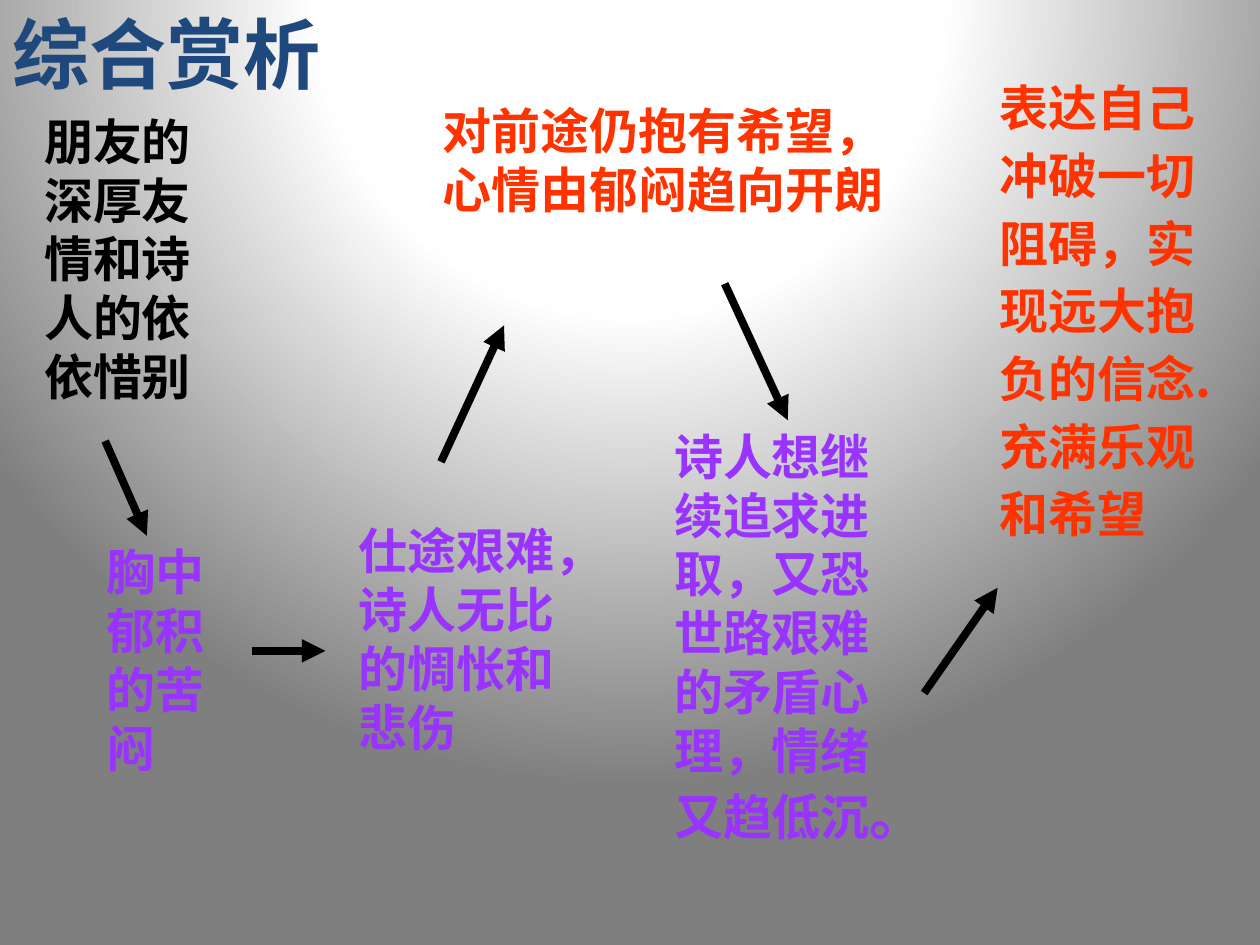
from lxml import etree
from pptx import Presentation
from pptx.dml.color import RGBColor
from pptx.enum.shapes import MSO_CONNECTOR
from pptx.enum.text import MSO_ANCHOR, MSO_AUTO_SIZE, PP_ALIGN
from pptx.oxml import parse_xml
from pptx.oxml.ns import qn
from pptx.util import Cm, Pt

STRAIGHT = MSO_CONNECTOR.STRAIGHT
TOP = MSO_ANCHOR.TOP
NO_FIT = MSO_AUTO_SIZE.NONE
LEFT = PP_ALIGN.LEFT
TITLE_ONLY = 5

CJK = "Noto Sans CJK SC"
PURPLE, ORANGE, BLACK, NAVY = "9933FF", "FF3300", "000000", "1F497D"
GRADIENT_STOPS = [(0, "FFFFFF"), (40, "FEFEFE"), (100, "7F7F7F")]

STAGES = [
    ((0.64, 2.12, 3.81, 6.2), "Arial", BLACK, 1,
     [("朋友的深厚友情和诗人的依依惜别", 28)]),
    ((1.9, 10.8, 3.18, 5), CJK, PURPLE, 1, [("胸中郁积的苦闷", 28)]),
    ((6.98, 10.37, 4.45, 6.2), "Arial", PURPLE, 1,
     [("仕途艰难，诗人无比的惆怅和悲伤", 28)]),
    ((8.68, 1.9, 9.53, 2.62), CJK, ORANGE, 1,
     [("对前途仍抱有希望，心情由郁闷趋向开朗", 28)]),
    ((13.34, 8.47, 5.29, 8.74), CJK, PURPLE, 1,
     [("诗人想继续追求进取，又恐世路艰难的矛盾心理，情绪又趋低沉", 28), ("。", 32)]),
    ((19.9, 1.27, 4.6, 9.8), CJK, ORANGE, 1.15,
     [("表达自己冲破一切阻碍，实现远大抱负的信念.充满乐观和希望", 28)]),
]
ARROWS = [
    (2.12, 8.89, 2.96, 10.8),
    (5.08, 13.12, 6.56, 13.12),
    (8.89, 9.31, 10.16, 6.56),
    (14.61, 5.72, 15.88, 8.47),
    (18.63, 13.97, 20.11, 11.85),
]


def color(hex_value):
    """Return the colour for a hex string."""
    return RGBColor.from_string(hex_value)


def format_run(run, face, size, hex_value):
    """Give a run its bold face, size and colour."""
    for name, value in {"name": face, "size": Pt(size), "bold": True}.items():
        setattr(run.font, name, value)
    run.font.color.rgb = color(hex_value)
    east_asian = etree.SubElement(run.font._element, qn("a:ea"))
    east_asian.set("typeface", CJK)


def paint_background(slide):
    """Fill the slide with a round glow centred above its top edge."""
    stops = "".join(
        f'<a:gs pos="{percent * 1000}"><a:srgbClr val="{shade}"/></a:gs>'
        for percent, shade in GRADIENT_STOPS)
    slide.element.cSld.insert(0, parse_xml(
        '<p:bg xmlns:p="http://schemas.openxmlformats.org/presentationml/2006/main" '
        'xmlns:a="http://schemas.openxmlformats.org/drawingml/2006/main">'
        f'<p:bgPr><a:gradFill rotWithShape="1"><a:gsLst>{stops}</a:gsLst>'
        '<a:path path="circle">'
        '<a:fillToRect l="50000" t="-80000" r="50000" b="180000"/>'
        '</a:path></a:gradFill><a:effectLst/></p:bgPr></p:bg>'))


def place_title(slide, box, wording):
    """Move the title placeholder to its box and format it."""
    title = slide.shapes.title
    title.left, title.top, title.width, title.height = map(Cm, box)
    frame = title.text_frame
    for name, value in {"vertical_anchor": TOP, "auto_size": NO_FIT,
                        "word_wrap": True}.items():
        setattr(frame, name, value)
    heading = frame.paragraphs[0]
    heading.alignment = LEFT
    run = heading.add_run()
    run.text = wording
    format_run(run, "Calibri", 44, NAVY)


def add_stage(slide, box, face, hex_value, spacing, wording):
    """Add one stage of the poet's feelings in its box."""
    frame = slide.shapes.add_textbox(*map(Cm, box)).text_frame
    frame.word_wrap = True
    feeling = frame.paragraphs[0]
    feeling.line_spacing = spacing
    for text, size in wording:
        run = feeling.add_run()
        run.text = text
        format_run(run, face, size, hex_value)


def add_arrow(slide, ends):
    """Add an arrow leading from one stage to the next."""
    arrow = slide.shapes.add_connector(STRAIGHT, *map(Cm, ends))
    arrow.line.width = Pt(4.5)
    arrow.line.color.rgb = color(BLACK)
    head = etree.SubElement(arrow.line._get_or_add_ln(), qn("a:tailEnd"))
    head.set("type", "triangle")
    etree.SubElement(arrow._element.spPr, qn("a:effectLst"))


def main():
    """Build the slide and save it."""
    deck = Presentation()
    deck.slide_width, deck.slide_height = Cm(25.4), Cm(19.05)
    slide = deck.slides.add_slide(deck.slide_layouts[TITLE_ONLY])
    paint_background(slide)
    place_title(slide, (0, 0, 24.56, 16.3), "综合赏析")
    for stage in STAGES:
        add_stage(slide, *stage)
    for ends in ARROWS:
        add_arrow(slide, ends)
    deck.save("out.pptx")


if __name__ == "__main__":
    main()
